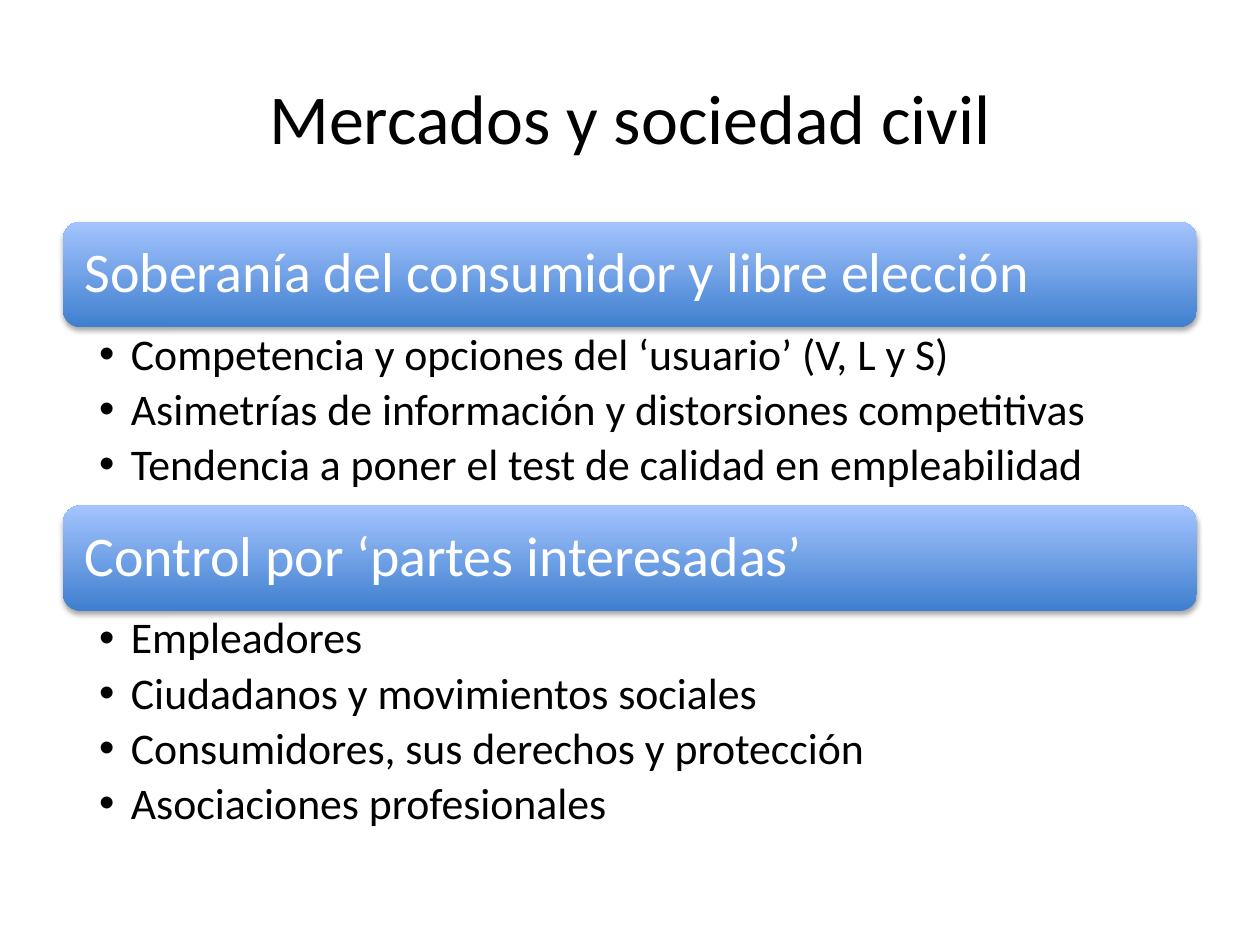
from lxml import etree
from pptx import Presentation
from pptx.dml.color import RGBColor
from pptx.enum import shapes, text
from pptx.oxml import parse_xml
from pptx.oxml.ns import nsdecls, qn
from pptx.util import Cm, Pt

BLACK = RGBColor(0x00, 0x00, 0x00)
WHITE = RGBColor(0xFF, 0xFF, 0xFF)
BAR_BOTTOM = RGBColor(0x3F, 0x7F, 0xCE)
BAR_TOP = RGBColor(0xA4, 0xC4, 0xFF)
FONT = "Calibri"

LEFT, WIDTH = Cm(1.27), Cm(22.86)
SECTIONS_TOP = Cm(4.47)
BAR_HEIGHT = Cm(2.13)

# Heading, points, height of the list
SECTIONS = [
    ("Soberanía del consumidor y libre elección",
     ["Competencia y opciones del ‘usuario’ (V, L y S)",
      "Asimetrías de información y distorsiones competitivas",
      "Tendencia a poner el test de calidad en empleabilidad"],
     Cm(3.59)),
    ("Control por ‘partes interesadas’",
     ["Empleadores",
      "Ciudadanos y movimientos sociales",
      "Consumidores, sus derechos y protección",
      "Asociaciones profesionales"],
     Cm(4.7)),
]


def place(part, left, top, width, height):
    part.left, part.top, part.width, part.height = left, top, width, height


def style(paragraph, size, color):
    paragraph.font.name = FONT
    paragraph.font.size = Pt(size)
    paragraph.font.color.rgb = color


def set_margins(frame, left, top, right, bottom):
    frame.margin_left, frame.margin_top = left, top
    frame.margin_right, frame.margin_bottom = right, bottom


def add_soft_shadow(shape):
    shape.shadow.inherit = False
    effects = shape.element.spPr.find(qn("a:effectLst"))
    effects.append(parse_xml(
        f'<a:outerShdw {nsdecls("a")} blurRad="40000" dist="23000" '
        'dir="5400000" rotWithShape="0"><a:srgbClr val="000000">'
        '<a:alpha val="35000"/></a:srgbClr></a:outerShdw>'))


def fill_title(title, left, top, width, height):
    place(title, left, top, width, height)
    title.text_frame.text = "Mercados y sociedad civil"
    title.text_frame.vertical_anchor = text.MSO_ANCHOR.MIDDLE
    title.text_frame.auto_size = text.MSO_AUTO_SIZE.NONE
    heading = title.text_frame.paragraphs[0]
    heading.alignment = text.PP_ALIGN.CENTER
    style(heading, 40, BLACK)


def add_heading_bar(slide, wording, left, top, width, height):
    bar = slide.shapes.add_shape(
        shapes.MSO_SHAPE.ROUNDED_RECTANGLE, left, top, width, height)
    bar.fill.gradient()
    bar.fill.gradient_angle = 90
    for stop, color in zip(bar.fill.gradient_stops, (BAR_BOTTOM, BAR_TOP)):
        stop.color.rgb = color
    bar.line.fill.background()
    add_soft_shadow(bar)

    frame = bar.text_frame
    frame.text = wording
    frame.word_wrap = True
    frame.vertical_anchor = text.MSO_ANCHOR.MIDDLE
    set_margins(frame, *[Cm(0.33)] * 4)
    heading = frame.paragraphs[0]
    heading.alignment = text.PP_ALIGN.LEFT
    heading.line_spacing = 0.9
    style(heading, 32, WHITE)


def fill_list(body, points, left, top, width, height):
    place(body, left, top, width, height)
    frame = body.text_frame
    frame.text = "\n".join(points)
    frame.auto_size = text.MSO_AUTO_SIZE.NONE
    frame.vertical_anchor = text.MSO_ANCHOR.TOP
    set_margins(frame, Cm(0.73), Cm(0.1), Cm(0.64), Cm(0.1))
    for point in frame.paragraphs:
        point.level = 1
        point.line_spacing = 0.9
        point.space_before = Pt(0)
        point.space_after = Pt(4.5)
        style(point, 25, BLACK)
        # Hanging bullet
        properties = point._p.get_or_add_pPr()
        properties.set("marL", str(Cm(0.64)))
        properties.set("indent", str(-Cm(0.64)))
        bullet = etree.Element(qn("a:buChar"), char="•")
        properties.insert_element_before(
            bullet, "a:tabLst", "a:defRPr", "a:extLst")


def add_section(slide, body, section, left, top, width):
    """Place a bar with its list below and return the bottom edge."""
    heading, points, list_height = section
    add_heading_bar(slide, heading, left, top, width, BAR_HEIGHT)
    list_top = top + BAR_HEIGHT
    fill_list(body, points, left, list_top, width, list_height)
    return list_top + list_height


def main():
    deck = Presentation()
    deck.slide_width, deck.slide_height = Cm(25.4), Cm(19.05)
    # Layout with a title and two lists
    slide = deck.slides.add_slide(deck.slide_layouts[3])
    title, *bodies = slide.placeholders

    fill_title(title, LEFT, Cm(0.76), WIDTH, Cm(3.18))

    # Sections stacked from top to bottom
    top = SECTIONS_TOP
    for body, section in zip(bodies, SECTIONS):
        top = add_section(slide, body, section, LEFT, top, WIDTH)

    deck.save("out.pptx")


if __name__ == "__main__":
    main()
